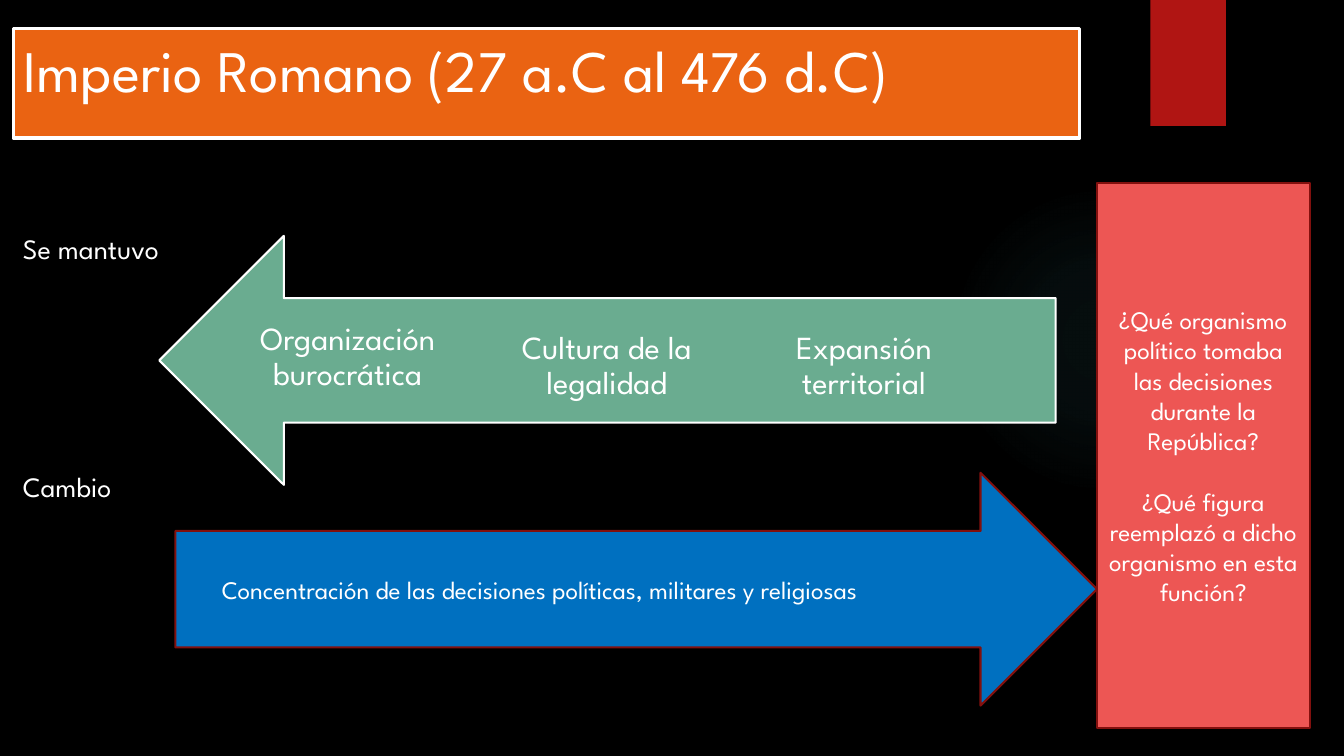
from lxml import etree
from pptx import Presentation
from pptx.dml.color import RGBColor
from pptx.enum.shapes import MSO_SHAPE as Shape
from pptx.enum.text import MSO_ANCHOR as Anchor, PP_ALIGN as Align
from pptx.oxml import parse_xml
from pptx.oxml.ns import nsdecls, qn
from pptx.util import Inches, Pt


def color(code):
    return RGBColor.from_string(code)


class Deck:
    """Holds the style and the current slide, and draws each kind of element."""

    font = "League Spartan"
    white = "FFFFFF"
    edge = "82100E"

    def __init__(self):
        self.prs = Presentation()
        self.prs.slide_width = Inches(13.33)
        self.prs.slide_height = Inches(7.5)
        self.slide = self.prs.slides.add_slide(self.prs.slide_layouts[5])
        back = self.slide.background.fill
        back.solid()
        back.fore_color.rgb = color("000000")

    def paint(self, shape, fill, line=None, width=1.5):
        shape.fill.solid()
        shape.fill.fore_color.rgb = color(fill)
        if line:
            shape.line.color.rgb = color(line)
            shape.line.width = Pt(width)
        else:
            shape.line.fill.background()

    def label(self, shape, text, size, align=Align.LEFT, anchor=Anchor.MIDDLE,
              pitch=None, gap=0):
        frame = shape.text_frame
        frame.text = text
        frame.word_wrap = True
        frame.vertical_anchor = anchor
        for rank, par in enumerate(frame.paragraphs):
            par.alignment = align
            if pitch:
                par.line_spacing = pitch
            if rank and gap:
                par.space_before = Pt(gap)
            for run in par.runs:
                run.font.name = self.font
                run.font.size = Pt(size)
                run.font.color.rgb = color(self.white)
        return frame

    def title(self, text, box):
        head = self.slide.shapes.title
        head.left, head.top, head.width, head.height = map(Inches, box)
        self.paint(head, "EA6312", self.white, 2.25)
        self.label(head, text, 42, anchor=Anchor.TOP)

    def shape(self, kind, box, fill, line=None):
        item = self.slide.shapes.add_shape(kind, *map(Inches, box))
        item.shadow.inherit = False
        self.paint(item, fill, line)
        return item

    def text(self, text, box, size, **style):
        item = self.slide.shapes.add_textbox(*map(Inches, box))
        return self.label(item, text, size, **style)

    def glow(self, box, tint, stops):
        item = self.shape(Shape.OVAL, box, tint)
        grad = parse_xml(
            f'<a:gradFill {nsdecls("a")} rotWithShape="1"><a:gsLst/>'
            '<a:path path="circle"><a:fillToRect l="50000" t="50000" '
            'r="50000" b="50000"/></a:path></a:gradFill>')
        for pos, alpha in stops:
            stop = etree.SubElement(grad[0], qn("a:gs"), pos=str(pos * 1000))
            hue = etree.SubElement(stop, qn("a:srgbClr"), val=tint)
            etree.SubElement(hue, qn("a:alpha"), val=str(alpha * 1000))
        props = item.element.spPr
        props.replace(props.find(qn("a:solidFill")), grad)


def main():
    deck = Deck()
    deck.glow((9.41, 1.83, 3.08, 3.08), "50B9C1", [(0, 7), (36, 6), (69, 0)])
    deck.shape(Shape.RECTANGLE, (11.41, 0, 0.75, 1.25), "B01513")
    deck.title("Imperio Romano (27 a.C al 476 d.C)", (0.13, 0.28, 10.58, 1.09))

    for label, top in (("Se mantuvo", 2.25), ("Cambio", 4.61)):
        deck.text(label, (0.13, top, 2, 0.45), 20, anchor=Anchor.TOP)

    deck.shape(Shape.LEFT_ARROW, (1.58, 2.34, 8.89, 2.47), "6AAC90", deck.white)
    for trait, left, top in (("Organización burocrática", 2.38, 2.93),
                             ("Cultura de la legalidad", 4.95, 3.02),
                             ("Expansión territorial", 7.5, 3.02)):
        frame = deck.text(trait, (left, top, 2.14, 1.23), 23,
                          align=Align.CENTER, pitch=0.9)
        frame.margin_left = frame.margin_right = 0

    change = deck.shape(Shape.RIGHT_ARROW, (1.74, 4.69, 9.14, 2.31), "0070C0",
                        deck.edge)
    frame = deck.label(change, "Concentración de las decisiones políticas, "
                       "militares y religiosas", 18)
    frame.margin_left = Inches(0.46)

    panel = deck.shape(Shape.RECTANGLE, (10.88, 1.82, 2.11, 5.4), "ED5654",
                       deck.edge)
    deck.label(panel, "¿Qué organismo político tomaba las decisiones durante la "
               "República?\n¿Qué figura reemplazó a dicho organismo en esta "
               "función?", 18, align=Align.CENTER, gap=21.6)

    deck.prs.save("out.pptx")


if __name__ == "__main__":
    main()
